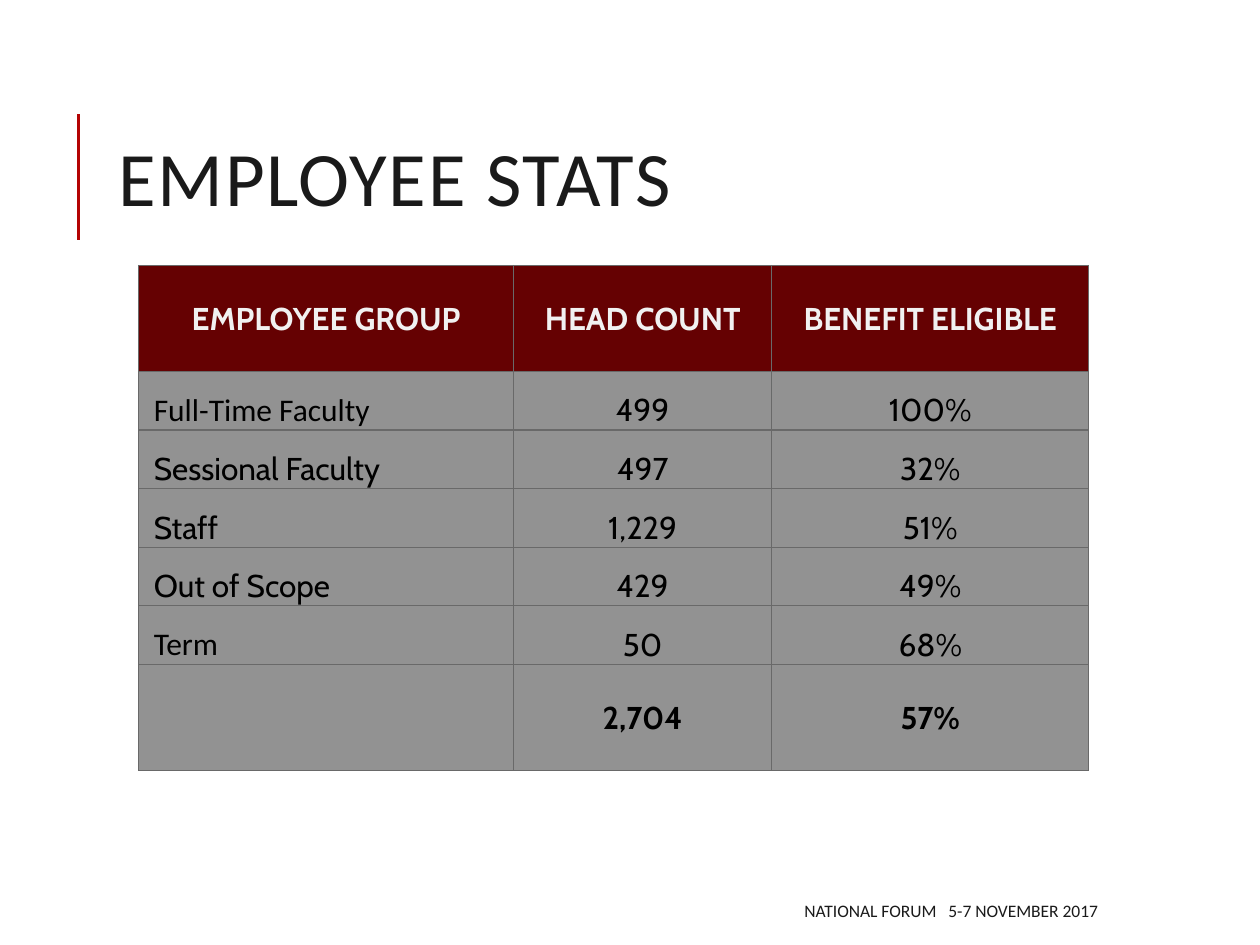
from lxml.etree import SubElement
from pptx import Presentation
from pptx.dml.color import RGBColor
from pptx.enum.shapes import MSO_CONNECTOR
from pptx.enum.text import MSO_ANCHOR, PP_ALIGN
from pptx.oxml import parse_xml
from pptx.oxml.ns import nsdecls, qn
from pptx.util import Pt

ACCENT = RGBColor(0xB4, 0x04, 0x04)
INK = RGBColor(0x1A, 0x1A, 0x1A)
BLACK = RGBColor(0, 0, 0)
HEADER_FILL = RGBColor(0x65, 0x01, 0x02)
HEADER_TEXT = RGBColor(0xF1, 0xF1, 0xF1)
BODY_FILL = RGBColor(0x92, 0x92, 0x92)
BORDER = RGBColor(0x69, 0x69, 0x69)

ROWS = [
    ("EMPLOYEE GROUP", "HEAD COUNT", "BENEFIT ELIGIBLE"),
    ("Full-Time Faculty", "499", "100%"),
    ("Sessional Faculty", "497", "32%"),
    ("Staff", "1,229", "51%"),
    ("Out of Scope", "429", "49%"),
    ("Term", "50", "68%"),
    ("", "2,704", "57%"),
]
CALIBRI_LABELS = ("Full-Time Faculty", "Term")
COL_WIDTHS = (214.3, 147.5, 181.2)
TALL_ROW, ROW = 60.5, 33.5


def style_text(p, size, color, font="Calibri", bold=False):
    for r in p.runs:
        r.font.size = Pt(size)
        r.font.name = font
        r.font.bold = bold
        r.font.color.rgb = color


def set_spacing(r, points):
    r.font._element.set("spc", str(round(points * 100)))


def add_text(s, texts, left, top, width, height, size):
    """Add a one-paragraph text box with one run for each text."""
    tf = s.shapes.add_textbox(Pt(left), Pt(top), Pt(width), Pt(height)).text_frame
    tf.word_wrap = True
    tf.vertical_anchor = MSO_ANCHOR.MIDDLE
    p = tf.paragraphs[0]
    for text in texts:
        p.add_run().text = text
    style_text(p, size, INK)
    return p


def add_accent_line(s):
    line = s.shapes.add_connector(
        MSO_CONNECTOR.STRAIGHT, Pt(44.8), Pt(137), Pt(44.8), Pt(65))
    line.line.color.rgb = ACCENT
    line.line.width = Pt(1.5)
    SubElement(line._element.spPr, qn("a:effectLst"))


def add_title(s):
    p = add_text(s, ["EMPLOYEE STATS"], 60.5, 46.2, 574, 118, 44)
    p.line_spacing = 0.8
    set_spacing(p.runs[0], 1)


def add_footer(s):
    """Add the event and date, parted by one widened space."""
    p = add_text(s, ["NATIONAL FORUM", " ", "5-7 NOVEMBER 2017"],
                 286, 509.6, 348.5, 21.6, 10)
    p.alignment = PP_ALIGN.RIGHT
    set_spacing(p.runs[1], 4.6)


def set_borders(cell):
    tc_pr = cell._tc.get_or_add_tcPr()
    for i, side in enumerate(("lnL", "lnR", "lnT", "lnB")):
        tc_pr.insert(i, parse_xml(
            f'<a:{side} {nsdecls("a")} w="{Pt(0.75)}"><a:solidFill>'
            f'<a:srgbClr val="{BORDER}"/></a:solidFill></a:{side}>'))


def fill_cell(cell, text, row, col):
    header, total = row == 0, row == len(ROWS) - 1
    cell.fill.solid()
    cell.fill.fore_color.rgb = HEADER_FILL if header else BODY_FILL
    set_borders(cell)
    label = col == 0 and not header
    cell.margin_left = Pt(8.7 if label else 0.7)
    cell.margin_right = cell.margin_top = Pt(0.7)
    cell.margin_bottom = Pt(0)
    cell.vertical_anchor = MSO_ANCHOR.MIDDLE if header or total else MSO_ANCHOR.BOTTOM
    p = cell.text_frame.paragraphs[0]
    p.text = text
    p.alignment = PP_ALIGN.LEFT if label else PP_ALIGN.CENTER
    style_text(p, 18, HEADER_TEXT if header else BLACK,
               "Calibri" if text in CALIBRI_LABELS else "Cabin", header or total)


def add_stats_table(s):
    heights = [TALL_ROW] + [ROW] * (len(ROWS) - 2) + [TALL_ROW]
    table = s.shapes.add_table(
        len(ROWS), len(COL_WIDTHS), Pt(79.2), Pt(151.7),
        Pt(sum(COL_WIDTHS)), Pt(sum(heights))).table
    for column, width in zip(table.columns, COL_WIDTHS):
        column.width = Pt(width)
    for row, (height, texts) in enumerate(zip(heights, ROWS)):
        table.rows[row].height = Pt(height)
        for col, text in enumerate(texts):
            fill_cell(table.cell(row, col), text, row, col)


def main():
    prs = Presentation()
    prs.slide_width, prs.slide_height = Pt(720), Pt(540)
    s = prs.slides.add_slide(prs.slide_layouts[6])
    add_accent_line(s)
    add_title(s)
    add_footer(s)
    add_stats_table(s)
    prs.save("out.pptx")


if __name__ == "__main__":
    main()
